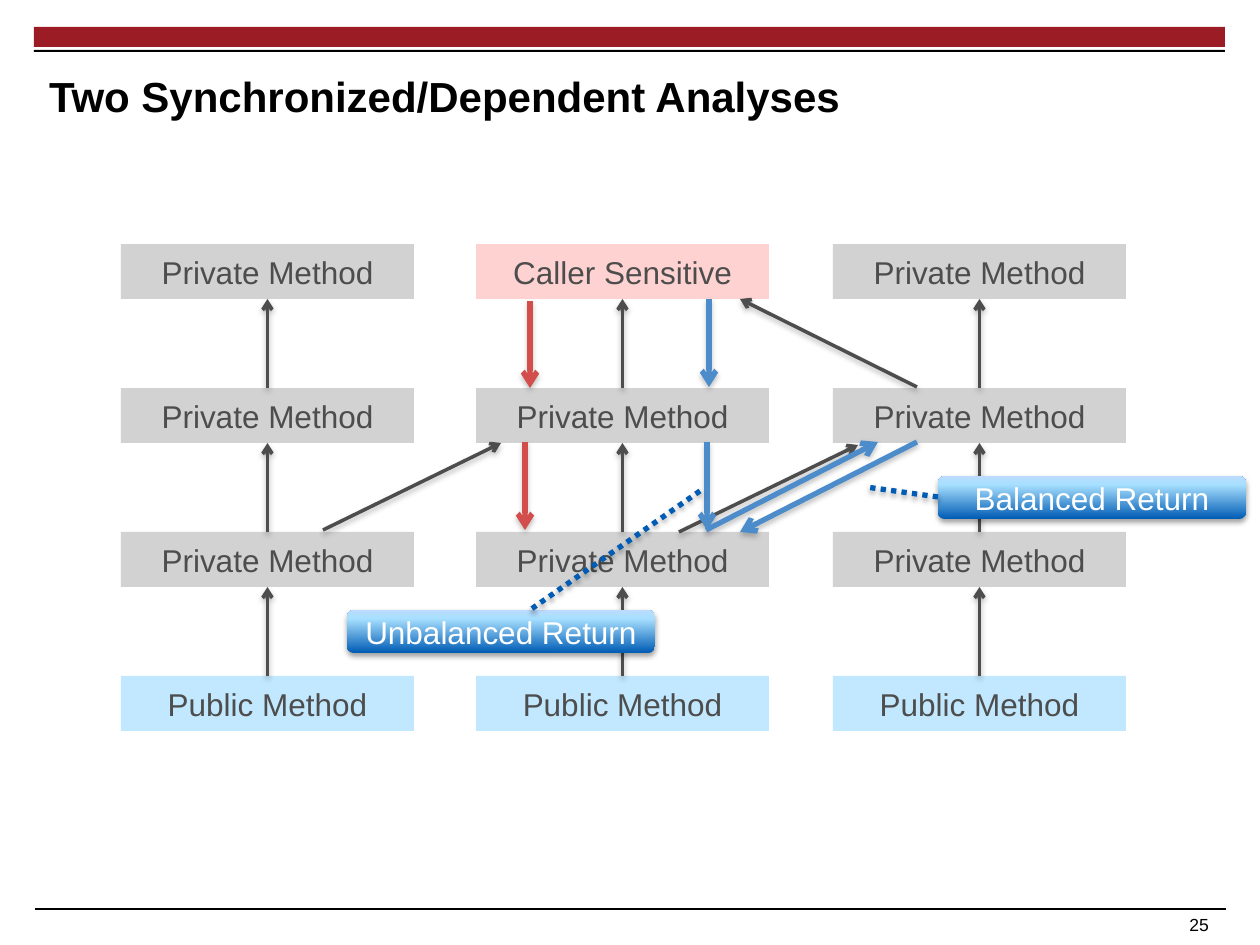
from pptx import Presentation
from pptx.dml.color import RGBColor
from pptx.enum.dml import MSO_LINE
from pptx.enum.shapes import MSO_CONNECTOR as CONNECTOR, MSO_SHAPE as SHAPE
from pptx.enum.text import MSO_ANCHOR as ANCHOR, PP_ALIGN as ALIGN
from pptx.oxml import parse_xml
from pptx.oxml.ns import nsdecls
from pptx.util import Pt

PX = 914400 / 126
COLORS = {
    "black": "000000", "white": "FFFFFF", "banner": "9C1C26",
    "private": "BFBFBF", "public": "A7DFFF", "sensitive": "FFBFBF",
    "blue": "005BB4", "red": "C00000", "pale": "BCDCFF",
}
SHADOW = (
    f'<a:effectLst {nsdecls("a")}><a:outerShdw blurRad="40000" dist="22000" '
    'dir="5400000" rotWithShape="0"><a:srgbClr val="000000">'
    '<a:alpha val="36000"/></a:srgbClr></a:outerShdw></a:effectLst>'
)


def add_box(kind, box, fill=None, text="", color="black"):
    """Add a borderless shape with centred text, positioned in px."""
    shape = slide.shapes.add_shape(kind, *[round(v * PX) for v in box])
    shape.line.fill.background()
    if fill:
        shape.shadow.inherit = False
        shape.fill.solid()
        shape.fill.fore_color.rgb = RGBColor.from_string(COLORS[fill])
    if text:
        frame = shape.text_frame
        frame.text = text
        frame.word_wrap = True
        frame.vertical_anchor = ANCHOR.MIDDLE
        frame.paragraphs[0].alignment = ALIGN.CENTER
        font = frame.paragraphs[0].runs[0].font
        font.name, font.size = "Arial", Pt(18)
        font.color.rgb = RGBColor.from_string(COLORS[color])
    return shape


def add_line(points, color="black", width=2, arrow=True, dash=None, shadow=SHADOW):
    """Add a straight connector through (x1, y1, x2, y2) in px."""
    connector = slide.shapes.add_connector(
        CONNECTOR.STRAIGHT, *[round(v * PX) for v in points])
    line = connector.line
    line.color.rgb = RGBColor.from_string(COLORS[color])
    line.width = Pt(width)
    if dash:
        line.dash_style = dash
    if arrow:
        line._get_or_add_ln().append(
            parse_xml(f'<a:tailEnd {nsdecls("a")} type="arrow"/>'))
    connector._element.spPr.append(parse_xml(shadow))


presentation = Presentation()
presentation.slide_width = round(1260 * PX)
presentation.slide_height = round(945 * PX)
slide = presentation.slides.add_slide(presentation.slide_layouts[5])

# Banner, footer rule and page number
add_box(SHAPE.RECTANGLE, (34, 27, 1191, 20), "banner")
add_box(SHAPE.RECTANGLE, (34, 50, 1191, 2), "black")
add_line((35, 909, 1226, 909), width=0.6, arrow=False,
         shadow=f'<a:effectLst {nsdecls("a")}/>')
number = slide.shapes.add_textbox(*[round(v * PX) for v in (233, 909, 993, 31)])
number.text_frame.text = "25 "
number.text_frame.word_wrap = True
number.text_frame.vertical_anchor = ANCHOR.MIDDLE
number.text_frame.paragraphs[0].alignment = ALIGN.RIGHT
font = number.text_frame.paragraphs[0].runs[0].font
font.name, font.size = "Arial", Pt(10)

# Title
title = slide.shapes.title
title.left, title.top, title.width, title.height = [
    round(v * PX) for v in (49, 56, 1176, 79)]
frame = title.text_frame
frame.text = "Two Synchronized/Dependent Analyses"
frame.word_wrap = True
frame.vertical_anchor = ANCHOR.MIDDLE
frame.margin_left = frame.margin_right = frame.margin_top = frame.margin_bottom = 0
frame.paragraphs[0].alignment = ALIGN.LEFT
font = frame.paragraphs[0].runs[0].font
font.name, font.size, font.bold = "Arial", Pt(24), True
font.color.rgb = RGBColor.from_string(COLORS["black"])

# Call graph: three columns of methods, each called from the one below
COLUMNS = (121, 476, 833)
ROWS = [244 + 144 * row for row in range(4)]
BOX_WIDTH, BOX_HEIGHT = 293, 55
for column, left in enumerate(COLUMNS):
    for row, top in enumerate(ROWS):
        fill, text = "private", "Private Method"
        if row == 3:
            fill, text = "public", "Public Method"
        elif (column, row) == (1, 0):
            fill, text = "sensitive", "Caller Sensitive"
        add_box(SHAPE.RECTANGLE, (left, top, BOX_WIDTH, BOX_HEIGHT), fill, text)
    center = left + BOX_WIDTH / 2
    for upper, lower in zip(ROWS, ROWS[1:]):
        add_line((center, lower, center, upper + BOX_HEIGHT))

# Calls between columns
for points in ((323, 530, 501, 443), (679, 532, 858, 445), (917, 387, 740, 299)):
    add_line(points)

# Analysis flows
for color, points in (
    ("blue", (709, 299, 709, 387)),
    ("red", (530, 301, 530, 388)),
    ("blue", (707, 442, 707, 530)),
    ("red", (525, 442, 525, 530)),
    ("blue", (706, 530, 878, 442)),
    ("blue", (917, 442, 740, 532)),
):
    add_line(points, color, 3)

# Translucent veil that fades the graph behind the callouts
veil = add_box(SHAPE.RECTANGLE, (20, 135, 1216, 685), "white")
veil_color = veil._element.spPr.find(".//{*}solidFill/{*}srgbClr")
veil_color.append(parse_xml(f'<a:alpha {nsdecls("a")} val="30000"/>'))

# Callouts with dotted leaders
stops = "".join(
    f'<a:gs pos="{position}000"><a:srgbClr val="{COLORS[color]}"/></a:gs>'
    for position, color in ((0, "blue"), (80, "public"), (100, "pale")))
for text, left, top, leader in (
    ("Balanced Return", 938, 476, (938, 497, 866, 487)),
    ("Unbalanced Return", 347, 610, (700, 491, 530, 610)),
):
    callout = add_box(SHAPE.ROUNDED_RECTANGLE, (left, top, 308, 43),
                      text=text, color="white")
    properties = callout._element.spPr
    properties.insert(2, parse_xml(
        f'<a:gradFill {nsdecls("a")} rotWithShape="1"><a:gsLst>{stops}</a:gsLst>'
        '<a:lin ang="16200000" scaled="0"/></a:gradFill>'))
    properties.append(parse_xml(SHADOW))
    add_line(leader, "blue", 3, arrow=False, dash=MSO_LINE.ROUND_DOT)

presentation.save("out.pptx")
